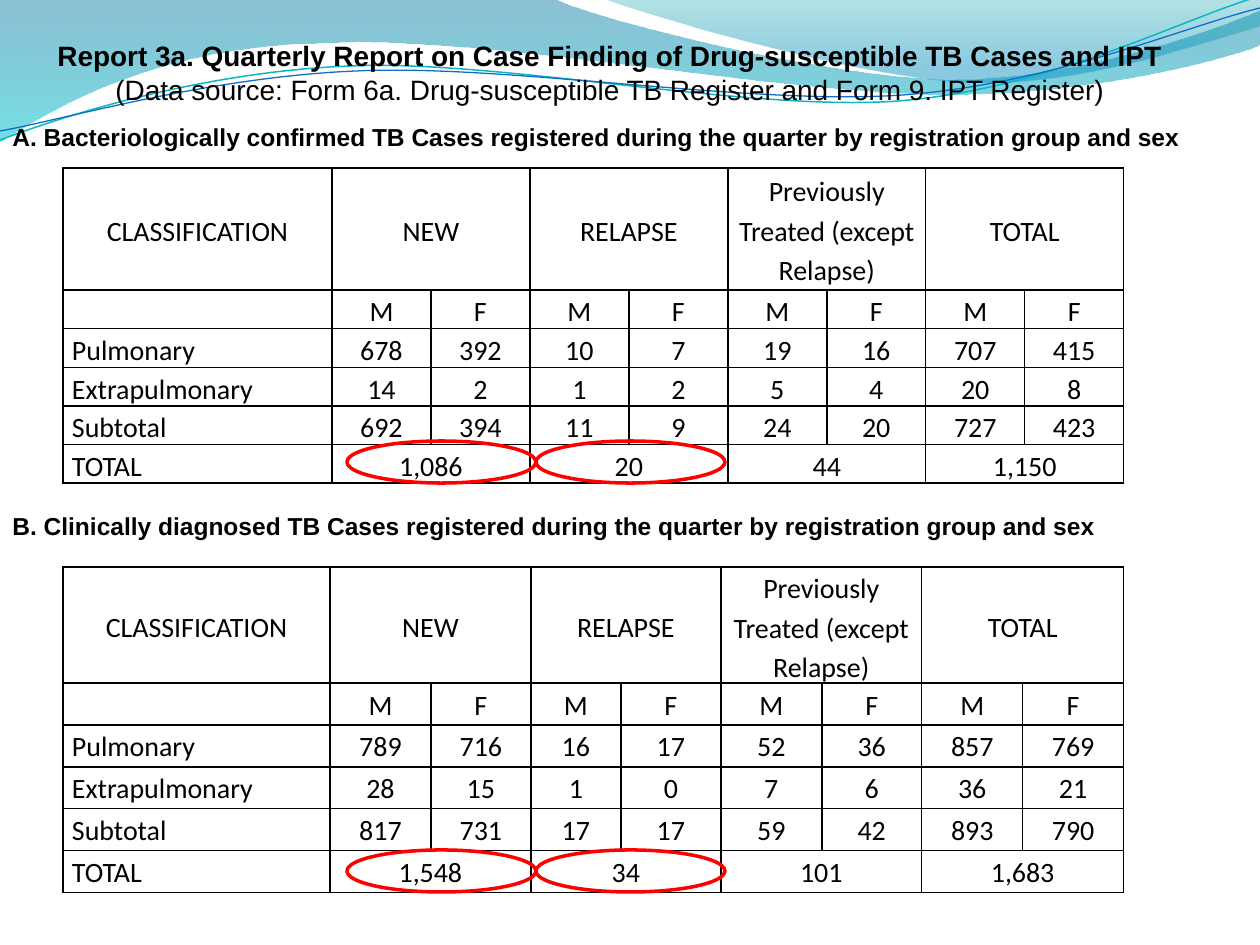
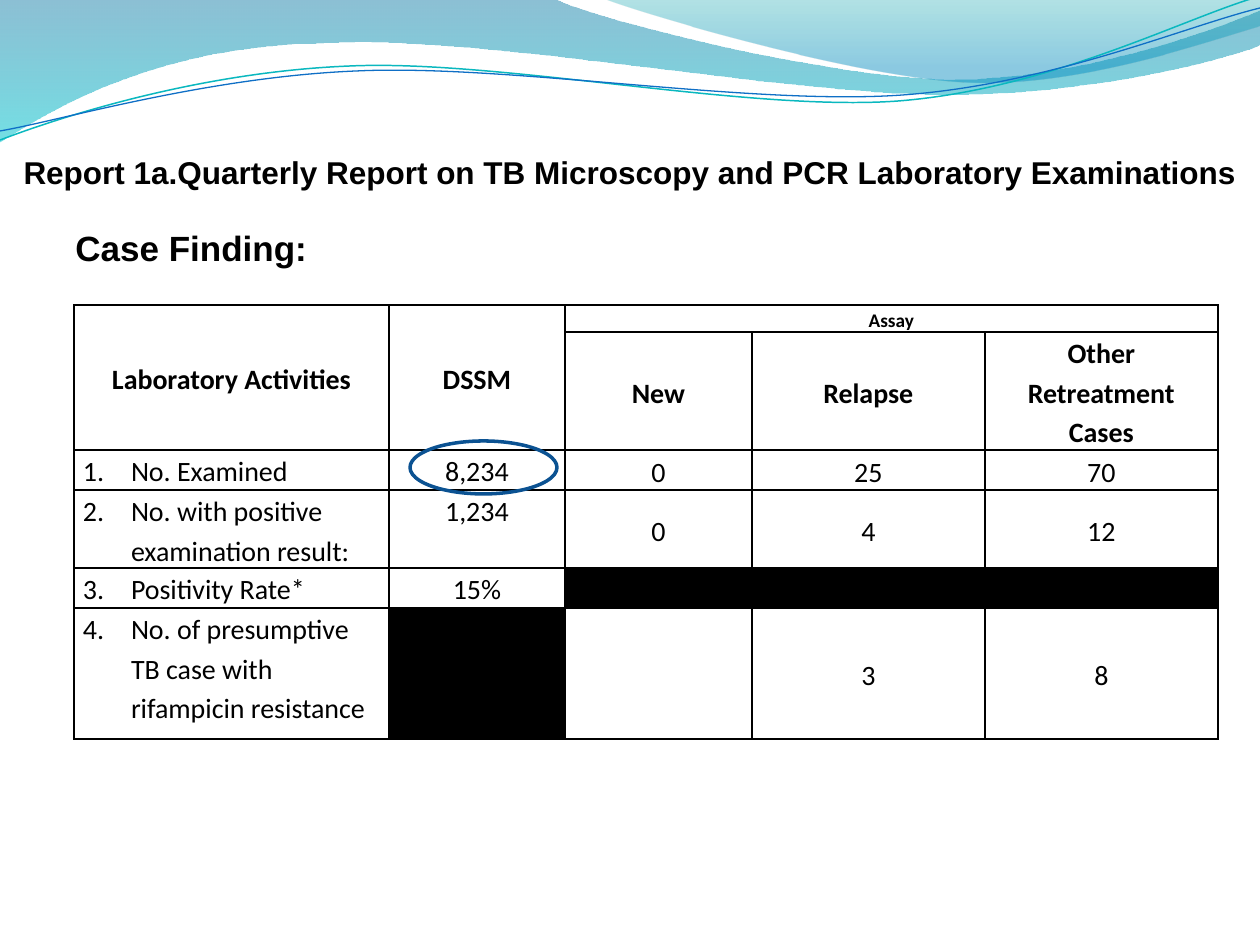
"""Build two slides of quarterly TB case finding and laboratory tables."""
from lxml.etree import SubElement
from pptx import Presentation
from pptx.dml.color import RGBColor
from pptx.enum.shapes import MSO_SHAPE
from pptx.enum.text import MSO_ANCHOR as Anchor, MSO_AUTO_SIZE as AutoSize, PP_ALIGN as Align
from pptx.oxml.ns import qn
from pptx.util import Inches, Pt

PX = Inches(1) // 126
COLORS = {
    "ink": "000000", "mark_red": "FF0000", "mark_blue": "0B5292",
    "deep": "0074A1", "aqua": "00C6CF", "teal": "00A1A9", "sky": "008BBF",
    "teal_line": "0AB8BF", "blue_line": "0F6FC6",
}
RGB = {name: RGBColor.from_string(value) for name, value in COLORS.items()}
BLACKOUT = "blackout"


def write(frame, text, size=16, font="Arial", bold=False, align=Align.LEFT,
          anchor=Anchor.MIDDLE, spacing=None, after=0, wrap=False, number=None):
    """Add one formatted paragraph to a text frame."""
    paragraph = frame.add_paragraph() if frame.text else frame.paragraphs[0]
    paragraph.alignment, paragraph.line_spacing = align, spacing
    paragraph.space_after = Pt(after)
    run = paragraph.add_run()
    run.text = text
    run.font.size, run.font.name, run.font.bold = Pt(size), font, bold
    run.font.color.rgb = RGB["ink"]
    frame.vertical_anchor, frame.word_wrap = anchor, wrap
    if number:
        props = paragraph.font._element.getparent()
        props.set("marL", str(48 * PX))
        props.set("indent", str(-48 * PX))
        bullet = props.makeelement(qn("a:buAutoNum"), type="arabicPeriod", startAt=str(number))
        props.find(qn("a:defRPr")).addprevious(bullet)


def add_grid(slide, rows, box, widths, heights, middle_from=9, bold_rows=0,
             after=0, numbered=False, small=()):
    """Add a bordered table; None joins a cell to the one on its left."""
    left, top, width, height = (n * PX for n in box)
    holder = slide.shapes.add_table(len(rows), len(widths), left, top, width, height)
    table = holder.table
    table.first_row = table.horz_banding = False
    for column, size in zip(table.columns, widths):
        column.width = size * PX
    for row, size in zip(table.rows, heights):
        row.height = size * PX
    holder.height = height
    for r, row in enumerate(rows):
        for c, text in enumerate(row):
            cell = table.cell(r, c)
            cell.margin_left = cell.margin_right = 9 * PX
            cell.margin_top = cell.margin_bottom = 0
            props = cell._tc.get_or_add_tcPr()
            for side in ("lnL", "lnR", "lnT", "lnB"):
                border = SubElement(props, qn(f"a:{side}"), w=str(Pt(1)))
                paint = SubElement(border, qn("a:solidFill"))
                SubElement(paint, qn("a:srgbClr"), val=COLORS["ink"])
            if text == BLACKOUT:
                cell.fill.solid()
                cell.fill.fore_color.rgb = RGB["ink"]
                continue
            cell.fill.background()
            if not text:
                continue
            middle = r < 2 or c >= middle_from
            label = c == 0 and r > 1
            write(cell.text_frame, text, size=11 if text in small else 16, font="Calibri",
                  bold=r < bold_rows, align=Align.LEFT if label else Align.CENTER,
                  spacing=1.15, after=0 if label else after, wrap=True,
                  number=r - 1 if label and numbered else None)
            cell.vertical_anchor = Anchor.MIDDLE if middle else Anchor.TOP
            last = c
            while last + 1 < len(row) and row[last + 1] is None:
                last += 1
            if last > c:
                cell.merge(table.cell(r, last))
    return table


deck = Presentation()
deck.slide_width, deck.slide_height = Inches(10), Inches(7.5)
layout = deck.slide_layouts[5]
case_slide, lab_slide = (deck.slides.add_slide(layout) for _ in range(2))

waves = [
    ((0, 0), [[(554, -1)], [(600, 21), (837, 79), (955, 79)],
              [(1075, 79), (1207, 33), (1260, 11)], [(1261, 45)],
              [(1239, 55), (1096, 96), (940, 94)], [(781, 94), (481, 35), (324, 43)],
              [(163, 45), (58, 105), (-1, 142)]],
     [(0, "deep", 45), (1, "aqua", 55)], None),
    ((604, -1), [[(641, 14), (859, 78), (969, 82)],
                 [(1079, 87), (1211, 40), (1260, 26)], [(1260, 0)]],
     [(0, "teal", 30), (0.8, "sky", 45)], None),
    ((0, 140), [[(60, 117), (199, 72), (349, 66)], [(498, 59), (747, 112), (898, 101)],
                [(1050, 89), (1182, 19), (1257, -3)]], None, ("teal_line", 0.85)),
    ((0, 131), [[(59, 121), (207, 77), (357, 71)], [(508, 64), (752, 106), (903, 95)],
                [(1053, 84), (1186, 26), (1260, 8)]], None, ("blue_line", 0.75)),
]
for start, segments, gradient, stroke in waves:
    builder = case_slide.shapes.build_freeform(*start, scale=float(PX))
    builder.add_line_segments([segment[-1] for segment in segments],
                              close=gradient is not None)
    wave = builder.convert_to_shape()
    wave.shadow.inherit = False
    left, top = round(wave.left / PX), round(wave.top / PX)
    for straight, segment in zip(list(wave.element.iter(qn("a:lnTo"))), segments):
        if len(segment) == 3:
            curve = straight.makeelement(qn("a:cubicBezTo"))
            for x, y in segment:
                SubElement(curve, qn("a:pt"), x=str(x - left), y=str(y - top))
            straight.getparent().replace(straight, curve)
    if gradient:
        wave.line.fill.background()
        wave.fill.gradient()
        wave.fill.gradient_angle = 270
        for stop, (position, color, _) in zip(wave.fill.gradient_stops, gradient):
            stop.position, stop.color.rgb = position, RGB[color]
        for stop, (_, _, opacity) in zip(wave.element.iter(qn("a:gs")), gradient):
            SubElement(stop[0], qn("a:alpha"), val=str(opacity * 1000))
    else:
        wave.fill.background()
        wave.line.color.rgb, wave.line.width = RGB[stroke[0]], Pt(stroke[1])
    layout.shapes.element.append(wave.element)

titles = [
    (case_slide, (42, 32, 1136, 81), False, 16,
     [("Report 3a. Quarterly Report on Case Finding of Drug-susceptible TB Cases and IPT", True),
      ("(Data source: Form 6a. Drug-susceptible TB Register and Form 9. IPT Register)", False)]),
    (lab_slide, (0, 147, 1260, 50), True, 18,
     [("Report 1a.Quarterly Report on TB Microscopy and PCR Laboratory Examinations", True)]),
]
for slide, box, wrap, size, lines in titles:
    title = slide.shapes.title
    title.left, title.top, title.width, title.height = (n * PX for n in box)
    for line, bold in lines:
        write(title.text_frame, line, size=size, bold=bold, align=Align.CENTER, wrap=wrap)
    title.text_frame.auto_size = AutoSize.SHAPE_TO_FIT_TEXT

headings = [
    (case_slide, (0, 115, 1198, 43), 14,
     "A. Bacteriologically confirmed TB Cases registered during the quarter by registration group and sex"),
    (case_slide, (0, 504, 1113, 43), 14,
     "B. Clinically diagnosed TB Cases registered during the quarter by registration group and sex"),
    (lab_slide, (63, 220, 260, 55), 20, "Case Finding:"),
]
for slide, box, size, text in headings:
    heading = slide.shapes.add_textbox(*(n * PX for n in box))
    write(heading.text_frame, text, size=size, bold=True)
    heading.text_frame.auto_size = AutoSize.SHAPE_TO_FIT_TEXT

group_header = ["CLASSIFICATION", "NEW", None, "RELAPSE", None,
                "Previously Treated (except Relapse)", None, "TOTAL", None]
sex_header = [""] + ["M", "F"] * 4
confirmed = [
    ["Pulmonary", "678", "392", "10", "7", "19", "16", "707", "415"],
    ["Extrapulmonary", "14", "2", "1", "2", "5", "4", "20", "8"],
    ["Subtotal", "692", "394", "11", "9", "24", "20", "727", "423"],
    ["TOTAL", "1,086", None, "20", None, "44", None, "1,150", None],
]
diagnosed = [
    ["Pulmonary", "789", "716", "16", "17", "52", "36", "857", "769"],
    ["Extrapulmonary", "28", "15", "1", "0", "7", "6", "36", "21"],
    ["Subtotal", "817", "731", "17", "17", "59", "42", "893", "790"],
    ["TOTAL", "1,548", None, "34", None, "101", None, "1,683", None],
]
add_grid(case_slide, [group_header, sex_header, *confirmed], (63, 168, 1061, 304),
         [269] + [99] * 8, [122] + [30] * 5)
add_grid(case_slide, [group_header, sex_header, *diagnosed], (63, 567, 1061, 324),
         [267, 101, 100, 90] + [100, 101] * 2 + [101], [84] + [42] * 5)

lab_rows = [
    ["Laboratory Activities", "DSSM", "Assay", None, None],
    ["", "", "New", "Relapse", "Other Retreatment Cases"],
    ["No. Examined", "8,234", "0", "25", "70"],
    ["No. with positive examination result:", "1,234", "0", "4", "12"],
    ["Positivity Rate*", "15%", BLACKOUT, BLACKOUT, BLACKOUT],
    ["No. of presumptive TB case with rifampicin resistance", BLACKOUT, "", "3", "8"],
]
activities = add_grid(lab_slide, lab_rows, (74, 305, 1144, 434), [315, 176, 187, 233, 233],
                      [27, 118, 40, 78, 40, 131], middle_from=2, bold_rows=2, after=10,
                      numbered=True, small=("Assay",))
for column in range(2):
    activities.cell(0, column).merge(activities.cell(1, column))

marks = [(case_slide, (x, y, 189, 42), "mark_red") for y in (850, 441) for x in (536, 347)]
marks.append((lab_slide, (410, 441, 147, 53), "mark_blue"))
for slide, box, color in marks:
    mark = slide.shapes.add_shape(MSO_SHAPE.OVAL, *(n * PX for n in box))
    mark.shadow.inherit = False
    mark.fill.background()
    mark.line.color.rgb, mark.line.width = RGB[color], Pt(2)

deck.save("out.pptx")
